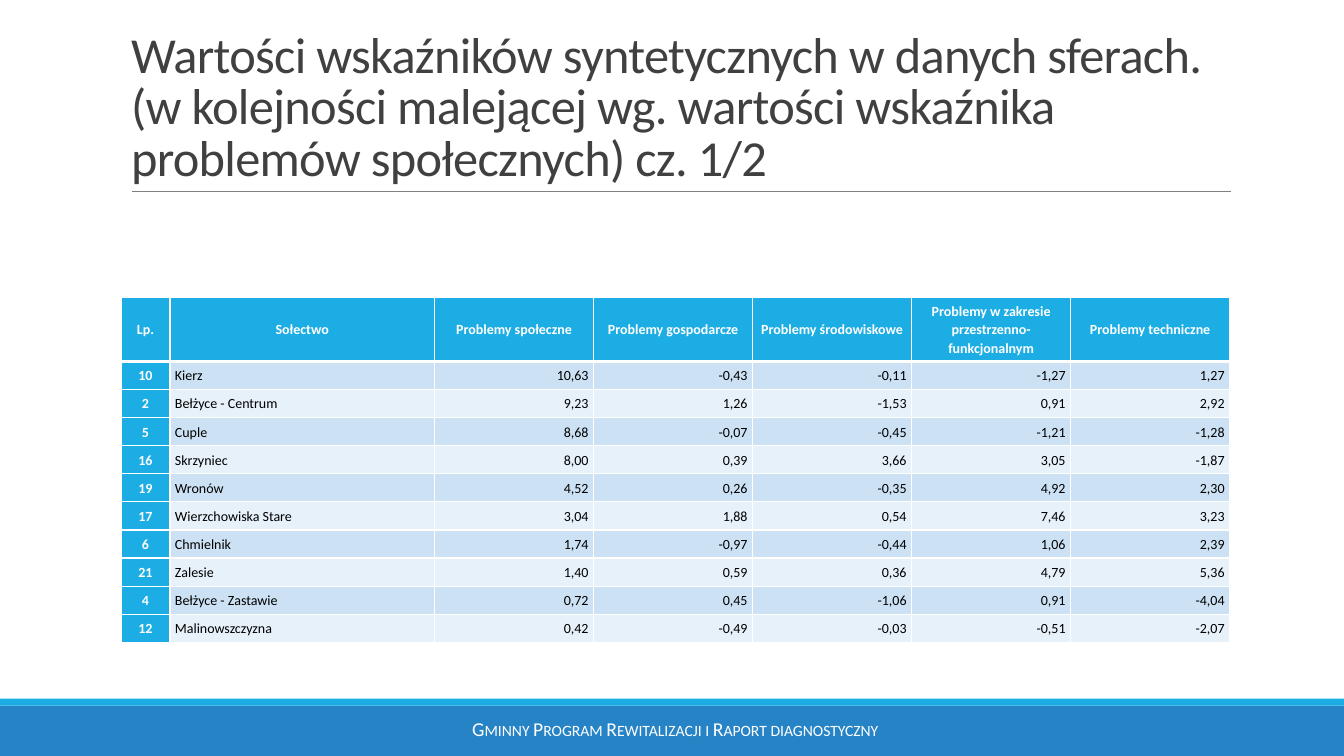
import pptx
import pptx.dml.color
import pptx.enum.shapes
import pptx.enum.text
import pptx.oxml
import pptx.oxml.ns
import pptx.util

Pt = pptx.util.Pt
RGBColor = pptx.dml.color.RGBColor
ALIGN = pptx.enum.text.PP_ALIGN
ANCHOR = pptx.enum.text.MSO_ANCHOR
AUTO_SIZE = pptx.enum.text.MSO_AUTO_SIZE

FONT = "Calibri"
WHITE = RGBColor(0xFF, 0xFF, 0xFF)
BLACK = RGBColor(0x00, 0x00, 0x00)
TITLE_GREY = RGBColor(0x40, 0x40, 0x40)
RULE_GREY = RGBColor(0x80, 0x80, 0x80)
BLUE = RGBColor(0x26, 0x83, 0xC6)
CYAN = RGBColor(0x1C, 0xAD, 0xE4)
ROW_TINTS = (RGBColor(0xCC, 0xE2, 0xF4), RGBColor(0xE7, 0xF1, 0xF9))

TITLE = (
    "Wartości wskaźników syntetycznych w danych sferach. (w kolejności "
    "malejącej wg. wartości wskaźnika problemów społecznych) cz. 1/2"
)
FOOTER = "Gminny Program Rewitalizacji i Raport diagnostyczny"
HEADERS = (
    "Lp.", "Sołectwo", "Problemy społeczne", "Problemy gospodarcze",
    "Problemy środowiskowe", "Problemy w zakresie przestrzenno-funkcjonalnym",
    "Problemy techniczne",
)
VILLAGES = (
    ("10", "Kierz", "10,63", "-0,43", "-0,11", "-1,27", "1,27"),
    ("2", "Bełżyce - Centrum", "9,23", "1,26", "-1,53", "0,91", "2,92"),
    ("5", "Cuple", "8,68", "-0,07", "-0,45", "-1,21", "-1,28"),
    ("16", "Skrzyniec", "8,00", "0,39", "3,66", "3,05", "-1,87"),
    ("19", "Wronów", "4,52", "0,26", "-0,35", "4,92", "2,30"),
    ("17", "Wierzchowiska Stare", "3,04", "1,88", "0,54", "7,46", "3,23"),
    ("6", "Chmielnik", "1,74", "-0,97", "-0,44", "1,06", "2,39"),
    ("21", "Zalesie", "1,40", "0,59", "0,36", "4,79", "5,36"),
    ("4", "Bełżyce - Zastawie", "0,72", "0,45", "-1,06", "0,91", "-4,04"),
    ("12", "Malinowszczyzna", "0,42", "-0,49", "-0,03", "-0,51", "-2,07"),
)
COLUMN_WIDTHS = (35, 189) + (113.6,) * 5
HEADER_HEIGHT, ROW_HEIGHT = 38.2, 14.4
MARGINS = ("margin_left", "margin_top", "margin_right", "margin_bottom")


def set_values(target, values):
    for name, value in values.items():
        setattr(target, name, value)


def write(frame, text, size, color, align, spacing=1.0, bold=False):
    paragraph = frame.paragraphs[0]
    set_values(paragraph, {"alignment": align, "line_spacing": spacing})
    run = paragraph.add_run()
    run.text = text
    set_values(run.font, {"name": FONT, "size": Pt(size), "bold": bold})
    run.font.color.rgb = color
    return run


def place_title(slide):
    title = slide.shapes.title
    set_values(title, {"left": Pt(86.4), "top": Pt(22.3),
                       "width": Pt(792), "height": Pt(114.5)})
    set_values(title.text_frame, {
        "word_wrap": True, "auto_size": AUTO_SIZE.NONE,
        "vertical_anchor": ANCHOR.BOTTOM,
    })
    run = write(title.text_frame, TITLE, 36, TITLE_GREY, ALIGN.LEFT, 0.85)
    run.font._element.set("spc", "-50")


def add_band(slide, top, height, color):
    band = slide.shapes.add_shape(
        pptx.enum.shapes.MSO_SHAPE.RECTANGLE, 0, Pt(top), Pt(960), Pt(height))
    band.shadow.inherit = False
    band.fill.solid()
    band.fill.fore_color.rgb = color
    band.line.fill.background()


def add_title_rule(slide):
    rule = slide.shapes.add_connector(
        pptx.enum.shapes.MSO_CONNECTOR.STRAIGHT,
        Pt(94.3), Pt(136.8), Pt(879.1), Pt(136.8))
    rule.line.width = Pt(0.5)
    rule.line.color.rgb = RULE_GREY
    rule._element.spPr.append(pptx.oxml.parse_xml(
        f'<a:effectLst {pptx.oxml.ns.nsdecls("a")}/>'))


def add_footer(slide):
    footer = slide.shapes.add_textbox(
        Pt(237.6), Pt(508.3), Pt(489.6), Pt(23.8))
    set_values(footer.text_frame, {
        "word_wrap": True, "auto_size": AUTO_SIZE.SHAPE_TO_FIT_TEXT})
    run = write(footer.text_frame, FOOTER, 14, WHITE, ALIGN.CENTER)
    run.font._element.set("cap", "small")


def set_borders(cell, bottom):
    properties = cell._tc.get_or_add_tcPr()
    for side, width in zip("LRTB", (0.96, 0.96, 0.96, bottom)):
        properties.append(pptx.oxml.parse_xml(
            f'<a:ln{side} {pptx.oxml.ns.nsdecls("a")} w="{Pt(width)}">'
            f'<a:solidFill><a:srgbClr val="{WHITE}"/></a:solidFill>'
            f'</a:ln{side}>'))


def fill_cell(cell, text, row, column):
    is_heading = row == 0 or column == 0
    if is_heading:
        align = ALIGN.CENTER
    else:
        align = ALIGN.LEFT if column == 1 else ALIGN.RIGHT
    is_value = row > 0 and column > 1
    set_values(cell, dict.fromkeys(MARGINS, Pt(3.6)))
    cell.vertical_anchor = ANCHOR.BOTTOM if is_value else ANCHOR.MIDDLE
    write(cell.text_frame, text, 10, WHITE if is_heading else BLACK,
          align, 1.07, is_heading)
    set_borders(cell, 3 if row == 0 else 0.96)
    cell.fill.solid()
    cell.fill.fore_color.rgb = CYAN if is_heading else ROW_TINTS[(row - 1) % 2]


def add_indicator_table(slide):
    rows = (HEADERS,) + VILLAGES
    height = HEADER_HEIGHT + ROW_HEIGHT * len(VILLAGES)
    table = slide.shapes.add_table(
        len(rows), len(HEADERS), Pt(86.4), Pt(212.4),
        Pt(sum(COLUMN_WIDTHS)), Pt(height)).table
    set_values(table, {"first_col": True, "horz_banding": False})
    for column, width in zip(table.columns, COLUMN_WIDTHS):
        column.width = Pt(width)
    for row, texts in enumerate(rows):
        table.rows[row].height = Pt(ROW_HEIGHT if row else HEADER_HEIGHT)
        for column, text in enumerate(texts):
            fill_cell(table.cell(row, column), text, row, column)


def main():
    deck = pptx.Presentation()
    set_values(deck, {"slide_width": Pt(960), "slide_height": Pt(540)})
    slide = deck.slides.add_slide(deck.slide_layouts[5])

    # Footer bands and heading rule
    add_band(slide, 504, 36, BLUE)
    add_band(slide, 499, 5, CYAN)
    add_title_rule(slide)
    add_footer(slide)

    # Title and indicator values
    place_title(slide)
    add_indicator_table(slide)

    deck.save("out.pptx")


if __name__ == "__main__":
    main()
